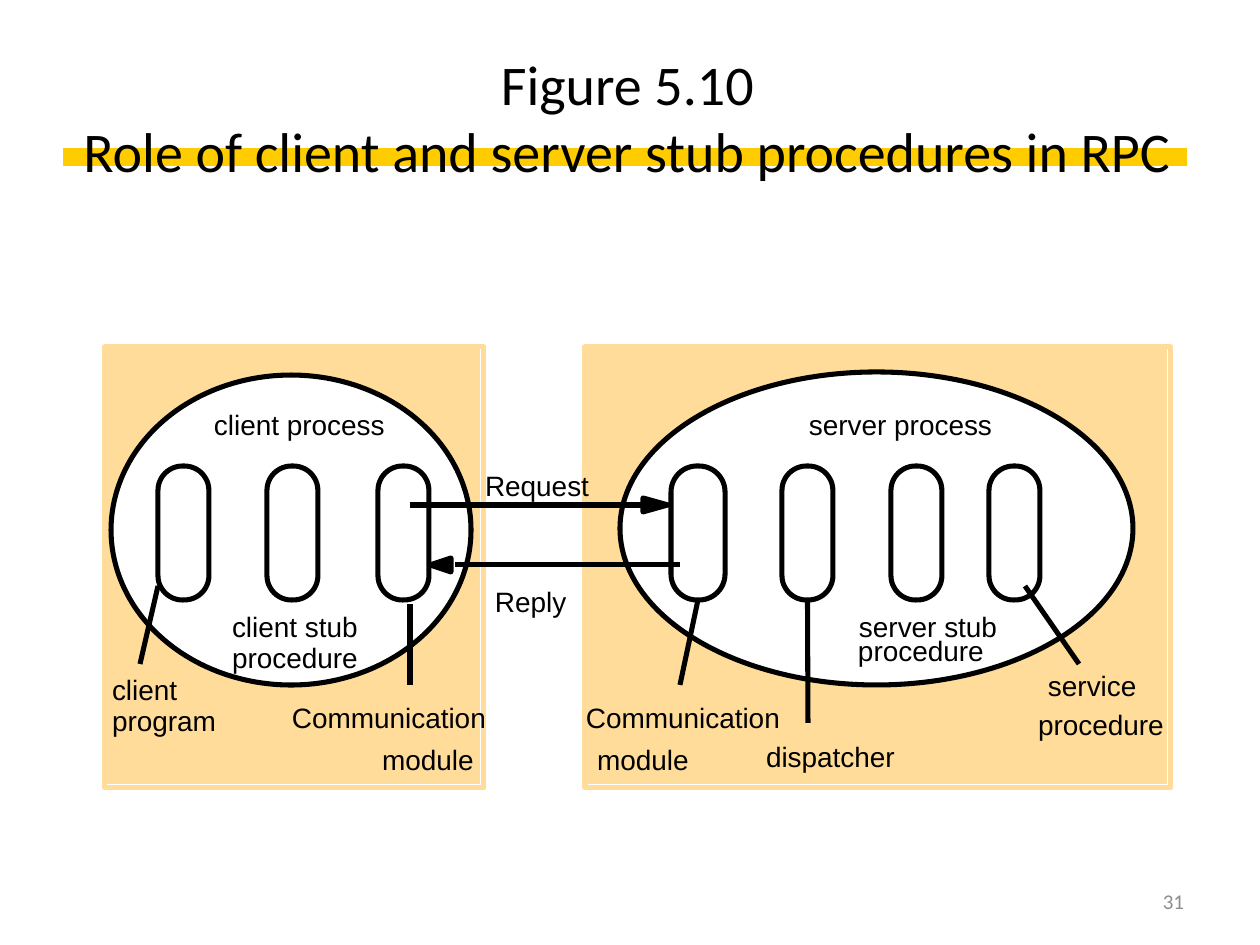
from lxml.etree import SubElement
from pptx import Presentation
from pptx.dml.color import RGBColor
from pptx.enum.shapes import MSO_CONNECTOR, MSO_SHAPE
from pptx.enum.text import MSO_ANCHOR, PP_ALIGN
from pptx.oxml.ns import qn
from pptx.util import Emu, Pt

SCALE = 914400 / 126
BLACK, WHITE, SAND, GOLD, GREY = "000000", "FFFFFF", "FFDC99", "FFCC00", "8C8C8C"
STROKE = 2.88
CAPSULE_TOP, CAPSULE_HEIGHT = 466, 134
LABELS = [
    ("client process", 214, 408, 178), ("server process", 809, 408, 190),
    ("Request", 485, 469, 108), ("Reply", 495, 585, 74),
    ("client stub", 232, 610, 131), ("procedure", 232, 641, 131),
    ("server stub", 859, 610, 144), ("procedure", 858, 634, 131),
    ("client", 112, 673, 68), ("program", 112, 704, 108),
    ("Communication", 292, 701, 202), ("module", 382, 743, 96),
    ("Communication", 586, 701, 202), ("module", 597, 743, 96),
    ("dispatcher", 766, 740, 134),
    ("service", 1048, 669, 92), ("procedure", 1038, 708, 131),
]


def px(n):
    """Turn pixels into EMU."""
    return Emu(round(n * SCALE))


def rgb(color):
    """Turn a hex string into a colour."""
    return RGBColor.from_string(color)


def paint(sp, fill=None, line=None):
    """Set fill and outline, and drop the shadow."""
    sp.shadow.inherit = False
    if fill:
        sp.fill.solid()
        sp.fill.fore_color.rgb = rgb(fill)
    else:
        sp.fill.background()
    if line:
        sp.line.color.rgb = rgb(line)
        sp.line.width = Pt(STROKE)
    else:
        sp.line.fill.background()


def add_shape(s, kind, box, fill=None, line=None):
    """Add a preset shape."""
    sp = s.shapes.add_shape(kind, *map(px, box))
    paint(sp, fill, line)
    return sp


def add_line(s, start, end, color=BLACK, width=STROKE):
    """Add a straight connector without a shadow."""
    cx = s.shapes.add_connector(MSO_CONNECTOR.STRAIGHT, *map(px, start + end))
    cx.line.color.rgb = rgb(color)
    cx.line.width = Pt(width)
    SubElement(cx._element.spPr, qn("a:effectLst"))
    return cx


def add_text(s, text, box, size=16, font="Arial", color=BLACK,
             align=PP_ALIGN.LEFT, anchor=MSO_ANCHOR.TOP, wrap=False, insets=(0, 0, 0, 0)):
    """Add a text box with one paragraph for each line of text."""
    tf = s.shapes.add_textbox(*map(px, box)).text_frame
    tf.word_wrap = wrap
    tf.vertical_anchor = anchor
    tf.margin_left, tf.margin_top, tf.margin_right, tf.margin_bottom = map(px, insets)
    tf.text = text
    for p in tf.paragraphs:
        p.alignment = align
        for r in p.runs:
            r.font.size = Pt(size)
            r.font.name = font
            r.font.color.rgb = rgb(color)


def add_panel(s, left, width):
    """Add a computer's background with its offset border."""
    add_shape(s, MSO_SHAPE.RECTANGLE, (left, 347, width, 437), fill=SAND)
    add_shape(s, MSO_SHAPE.RECTANGLE, (left, 347, width + 4, 441), line=SAND)


def add_capsule(s, left, width=51):
    """Add one module of a process."""
    sp = add_shape(s, MSO_SHAPE.ROUNDED_RECTANGLE,
                   (left, CAPSULE_TOP, width, CAPSULE_HEIGHT), line=BLACK)
    sp.adjustments[0] = 0.48
    return sp


def add_arrowhead(s, base, tip, y):
    """Add a solid triangular arrowhead."""
    fb = s.shapes.build_freeform(base, y - 7, scale=SCALE)
    fb.add_line_segments([(tip, y), (base, y + 7)], close=True)
    paint(fb.convert_to_shape(), BLACK, BLACK)


def add_messages(s):
    """Add the request and reply arrows."""
    add_line(s, (410, 505), (643, 505))
    add_arrowhead(s, 643, 668, 505)
    add_line(s, (680, 565), (455, 565))
    add_arrowhead(s, 451, 430, 565)


def add_processes(s):
    """Add both processes with their modules and leader lines."""
    add_panel(s, 105, 375)
    add_panel(s, 585, 582)
    add_shape(s, MSO_SHAPE.OVAL, (620, 372, 513, 313), WHITE, BLACK)
    add_shape(s, MSO_SHAPE.OVAL, (111, 375, 360, 310), WHITE, BLACK)
    for left in (158, 267, 378, 891, 989):
        add_capsule(s, left)
    server_module = add_capsule(s, 671, 54)
    dispatcher = add_capsule(s, 782)
    add_line(s, (158, 586), (140, 664))
    add_line(s, (410, 604), (410, 685))
    add_line(s, (1025, 586), (1079, 664))
    add_line(s, (698, 600), (680, 685)).begin_connect(server_module, 2)
    add_line(s, (808, 600), (808, 723)).begin_connect(dispatcher, 2)


def main():
    """Build the slide and save it."""
    prs = Presentation()
    prs.slide_width, prs.slide_height = px(1260), px(945)
    s = prs.slides.add_slide(prs.slide_layouts[6])
    add_line(s, (63, 157), (1187, 157), GOLD, 10)
    add_text(s, "Figure 5.10\nRole of client and server stub procedures in RPC",
             (63, 38, 1134, 157), size=32, font="Calibri", align=PP_ALIGN.CENTER,
             anchor=MSO_ANCHOR.MIDDLE, wrap=True, insets=(13, 6, 18, 6))
    add_processes(s)
    add_messages(s)
    for text, left, top, width in LABELS:
        add_text(s, text, (left, top, width, 35))
    add_text(s, "31", (903, 876, 294, 50), size=12, font="Calibri", color=GREY,
             align=PP_ALIGN.RIGHT, anchor=MSO_ANCHOR.MIDDLE, wrap=True, insets=(13, 6, 13, 6))
    prs.save("out.pptx")


if __name__ == "__main__":
    main()
